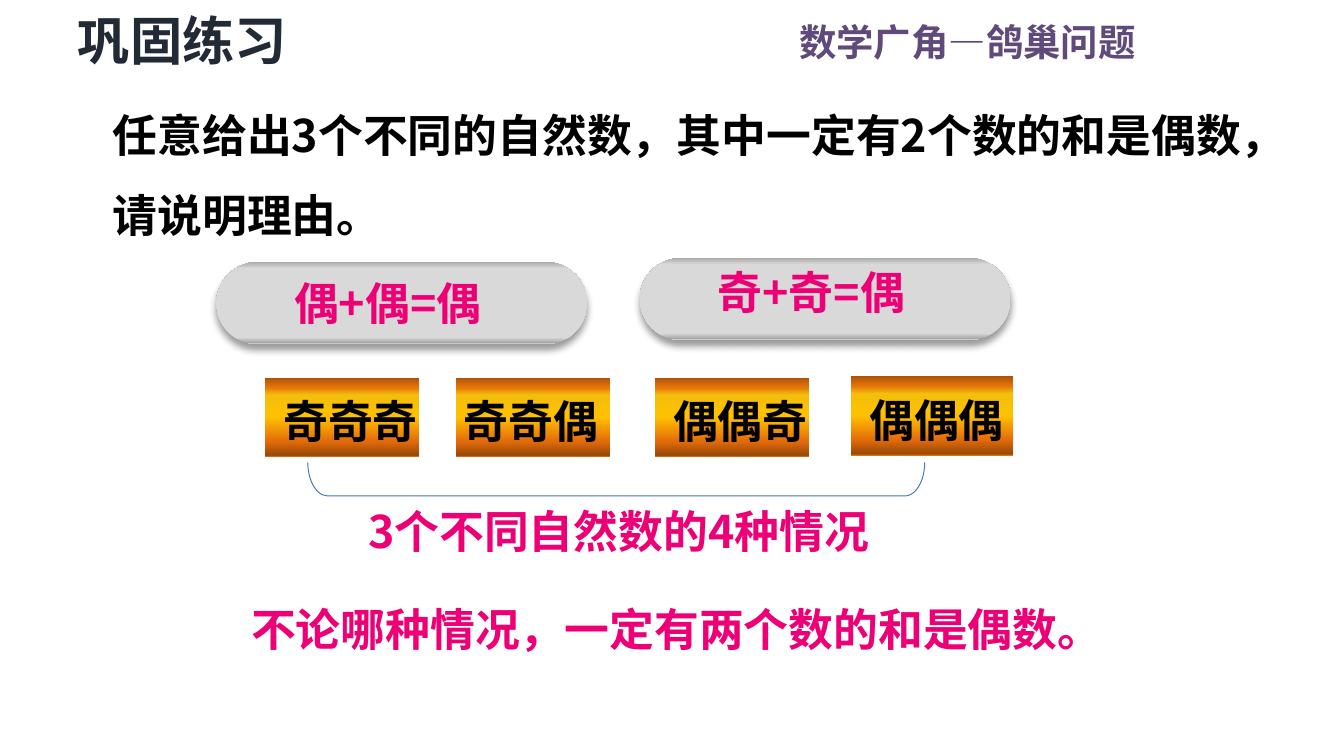
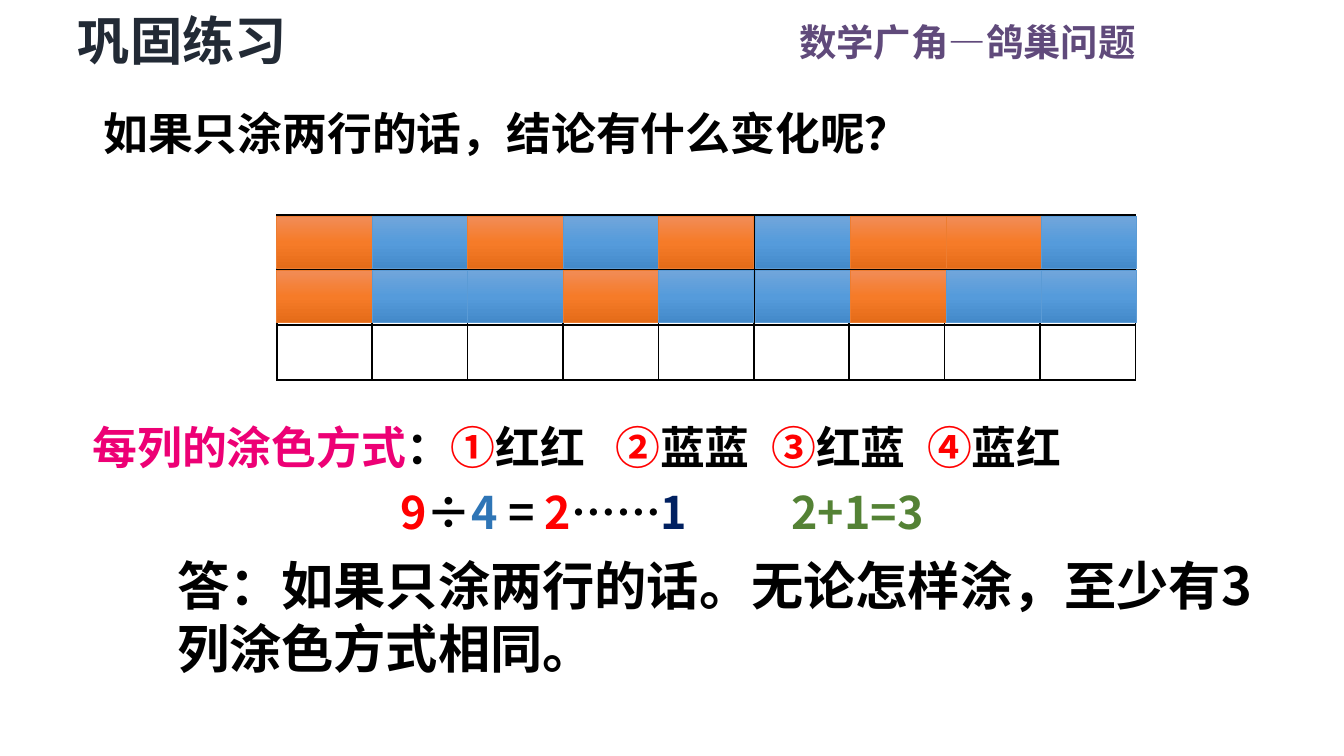
from lxml.etree import SubElement
from pptx import Presentation
from pptx.dml.color import RGBColor
from pptx.enum.shapes import MSO_SHAPE
from pptx.enum.text import MSO_AUTO_SIZE, PP_ALIGN
from pptx.oxml.ns import qn
from pptx.util import Pt

PX = 9144
FONT = "Noto Sans CJK SC"
BLACK, PINK, RED = "000000", "ED0075", "FF0000"
PILL = [(0, "FFFFFF"), (1, "A1A1A1"), (8, "D9D9D9"), (92, "D9D9D9"), (100, "ABABAB")]
GOLD = [(0, "E77509"), (2, "984807"), (20, "E46C0A"), (50, "FFC000"),
        (78, "F3BF0B"), (87, "E77709"), (100, "AD5208")]
ORANGE = [(0, "F18C57"), (50, "F67B28"), (100, "E56C19")]
BLUE = [(0, "71A6DB"), (50, "559BDB"), (100, "448ACA")]
paint = RGBColor.from_string


def write_text(page, frame, runs, size=24, spacing=None, align=None, inset=(10, 5), tabs=()):
    box = page.shapes.add_textbox(*[length * PX for length in frame])
    text = box.text_frame
    text.word_wrap = True
    text.auto_size = MSO_AUTO_SIZE.SHAPE_TO_FIT_TEXT
    text.margin_left = text.margin_right = inset[0] * PX
    text.margin_top = text.margin_bottom = inset[1] * PX
    para = text.paragraphs[0]
    if tabs:
        stops = SubElement(para._p.get_or_add_pPr(), qn("a:tabLst"))
        for stop in tabs:
            SubElement(stops, qn("a:tab"), pos=str(stop * PX), algn="l")
    para.alignment = align
    para.line_spacing = spacing
    for words, colour in runs:
        span = para.add_run()
        span.text = words
        span.font.size = Pt(size)
        span.font.bold = True
        span.font.color.rgb = paint(colour)
        span.font.name = FONT
        SubElement(span._r.get_or_add_rPr(), qn("a:ea"), typeface=FONT)


def add_block(page, kind, frame, stops, angle, edge=None):
    block = page.shapes.add_shape(kind, *[length * PX for length in frame])
    block.shadow.inherit = False
    block.fill.gradient()
    block.fill.gradient_angle = 360 - angle
    stop_list = block._element.spPr.find(qn("a:gradFill")).find(qn("a:gsLst"))
    stop_list.clear()
    for place, colour in stops:
        stop = SubElement(stop_list, qn("a:gs"), pos=str(place * 1000))
        SubElement(stop, qn("a:srgbClr"), val=colour)
    if edge:
        block.line.color.rgb = paint(edge)
        block.line.width = Pt(0.5)
    else:
        block.line.fill.background()
    return block


deck = Presentation()
deck.slide_width = 1000 * PX
deck.slide_height = Pt(405)
pages = [deck.slides.add_slide(deck.slide_layouts[6]) for _ in range(2)]
for page in pages:
    write_text(page, (579, 9, 276, 44), [("数学广角—鸽巢问题", "604A7B")], 20, align=PP_ALIGN.RIGHT)
    write_text(page, (51, 2, 202, 55), [("巩固练习", "222A35")], 28, inset=(7, 4))
parity, colouring = pages

write_text(parity, (74, 55, 888, 122),
           [("任意给出3个不同的自然数，其中一定有2个数的和是偶数，请说明理由。", BLACK)], spacing=1.5)

for left, top, words, text_top, text_width in [
    (161, 195, "偶+偶=偶", 200, 201),
    (476, 192, "奇+奇=偶", 192, 209),
]:
    pill = add_block(parity, MSO_SHAPE.ROUNDED_RECTANGLE, (left, top, 276, 61), PILL, 270)
    pill.adjustments[0] = 0.5
    effects = pill._element.spPr.find(qn("a:effectLst"))
    shadow = SubElement(effects, qn("a:outerShdw"), blurRad=str(Pt(4)), dist=str(Pt(3)),
                        dir="5400000", algn="t", rotWithShape="0")
    tint = SubElement(shadow, qn("a:srgbClr"), val=BLACK)
    SubElement(tint, qn("a:alpha"), val="40000")
    write_text(parity, (left + 48, text_top, text_width, 50), [(words, PINK)])

for left, top, width, words, shift, text_width in [
    (197, 281, 115, "奇奇奇", 4, 142),
    (339, 281, 115, "奇奇偶", -4, 134),
    (487, 281, 115, "偶偶奇", 4, 124),
    (633, 280, 121, "偶偶偶", 4, 154),
]:
    add_block(parity, MSO_SHAPE.RECTANGLE, (left, top, width, 59), GOLD, 270)
    write_text(parity, (left + shift, top + 7, text_width, 50), [(words, BLACK)])

write_text(parity, (177, 443, 660, 50), [("不论哪种情况，一定有两个数的和是偶数。", PINK)])
bracket = parity.shapes.add_shape(MSO_SHAPE.LEFT_BRACKET, 446 * PX, 127 * PX, 25 * PX, 459 * PX)
bracket.shadow.inherit = False
bracket.rotation = 270
bracket.adjustments[0] = 0.59
bracket.fill.background()
bracket.line.color.rgb = paint("4472C4")
bracket.line.width = Pt(0.5)
write_text(parity, (264, 370, 474, 50), [("3个不同自然数的4种情况", PINK)])

grid = colouring.shapes.add_table(3, 9, 206 * PX, 160 * PX, 639 * PX, 123 * PX).table
grid.first_row = grid.horz_banding = False
for column in grid.columns:
    column.width = 71 * PX
for row in grid.rows:
    row.height = 41 * PX
    for cell in row.cells:
        cell.margin_top = cell.margin_bottom = 0
        properties = cell._tc.get_or_add_tcPr()
        for side in ("a:lnL", "a:lnR", "a:lnT", "a:lnB"):
            border = SubElement(properties, qn(side), w=str(Pt(1)))
            ink = SubElement(border, qn("a:solidFill"))
            SubElement(ink, qn("a:srgbClr"), val=BLACK)
        cell.fill.background()

write_text(colouring, (67, 74, 779, 50), [("如果只涂两行的话，结论有什么变化呢？", BLACK)])

for column, pair in enumerate(["红红", "蓝蓝", "红蓝", "蓝红", "红蓝", "蓝蓝", "红红", "红蓝", "蓝蓝"]):
    for row, name in enumerate(pair):
        stops, edge = (ORANGE, "ED7D31") if name == "红" else (BLUE, "5B9BD5")
        frame = (206 + round(71.1 * column), 161 + 40 * row, 71, 39)
        add_block(colouring, MSO_SHAPE.RECTANGLE, frame, stops, 90, edge)

ways = [("每列的涂色方式", PINK), ("：", BLACK)]
for mark, way in [("①", "红红\t"), ("②", "蓝蓝\t"), ("③", "红蓝\t"), ("④", "蓝红")]:
    ways += [(mark, RED), (way, BLACK)]
write_text(colouring, (59, 287, 867, 71), ways, spacing=1.5, tabs=(389, 505, 621))

write_text(colouring, (288, 352, 272, 49), [
    ("9", RED), ("÷", BLACK), ("4", "2E75B6"), (" = ", BLACK),
    ("2", RED), ("……", BLACK), ("1", "002060"),
], spacing=1.1)
write_text(colouring, (579, 352, 180, 49), [("2+1=3", "548235")], spacing=1.1)
write_text(colouring, (122, 407, 821, 104),
           [("答：如果只涂两行的话。无论怎样涂，至少有3列涂色方式相同。", BLACK)], 28)

deck.save("out.pptx")
